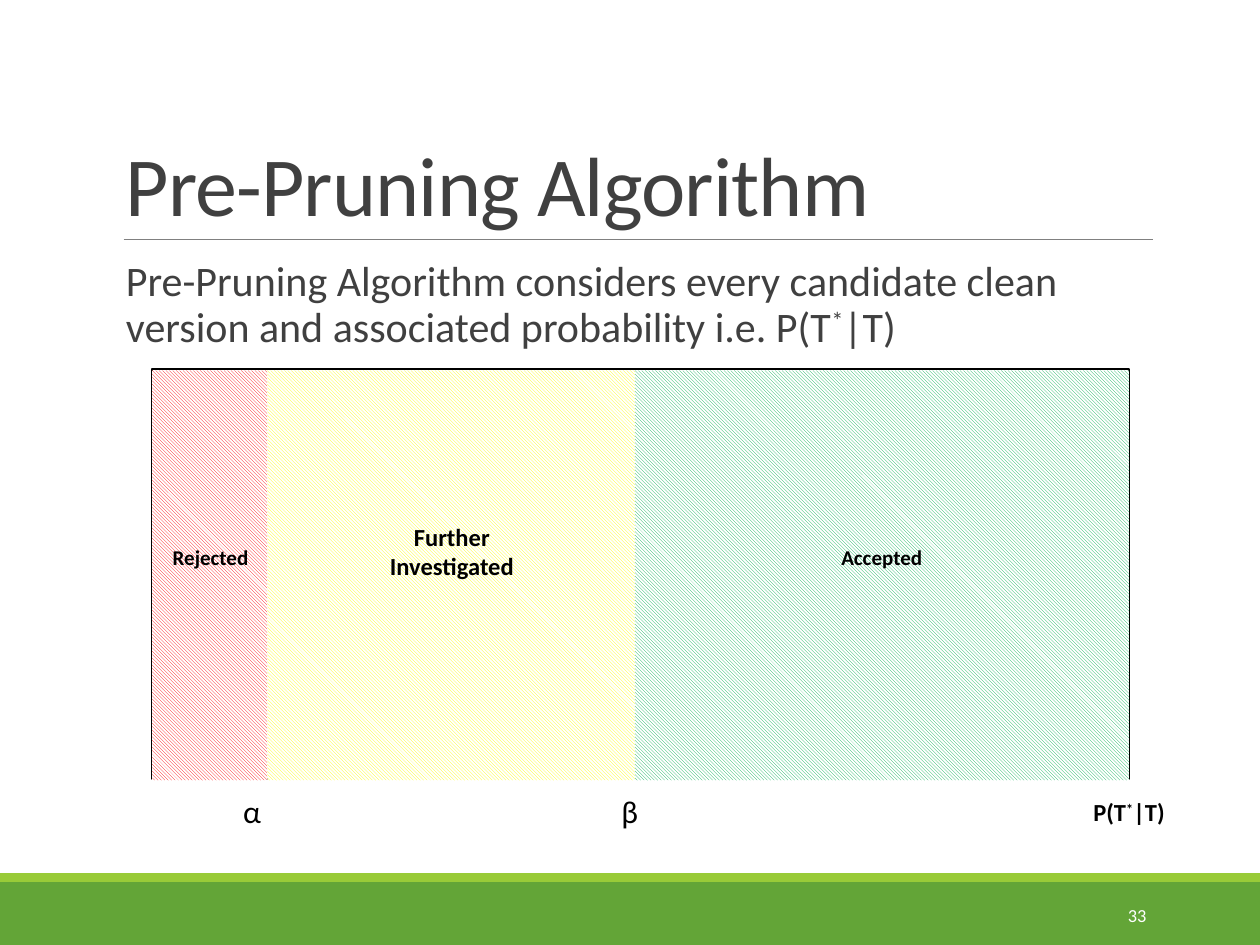
from dataclasses import dataclass

from pptx import Presentation
from pptx.dml.color import RGBColor
from pptx.enum.dml import MSO_PATTERN
from pptx.enum.shapes import MSO_CONNECTOR, MSO_SHAPE
from pptx.enum.text import MSO_ANCHOR as Anchor, PP_ALIGN as Align
from pptx.oxml.ns import qn
from pptx.util import Cm, Pt

FONT = "Calibri"
BLACK = RGBColor(0x00, 0x00, 0x00)
WHITE = RGBColor(0xFF, 0xFF, 0xFF)
DARK = RGBColor(0x40, 0x40, 0x40)
GRAY = RGBColor(0x80, 0x80, 0x80)
GREEN = RGBColor(0x63, 0xA5, 0x37)
LIME = RGBColor(0x99, 0xCB, 0x38)
RED = RGBColor(0xFF, 0x00, 0x00)
YELLOW = RGBColor(0xFF, 0xFF, 0x00)
MINT = RGBColor(0x00, 0xB0, 0x50)

WIDTH, HEIGHT = 25.4, 19.05
LEFT, TOP, TALL = 3.07, 7.47, 8.26


@dataclass
class Box:
    left: float
    top: float
    width: float
    height: float

    def cm(self) -> tuple:
        return Cm(self.left), Cm(self.top), Cm(self.width), Cm(self.height)


@dataclass
class Label:
    text: str
    box: Box
    size: float
    bold: bool = False
    color: RGBColor = BLACK
    align: Align = Align.CENTER
    anchor: Anchor = Anchor.TOP


@dataclass
class Zone:
    width: float
    color: RGBColor


def add_rect(slide, box: Box):
    rect = slide.shapes.add_shape(MSO_SHAPE.RECTANGLE, *box.cm())
    rect.shadow.inherit = False
    rect.line.fill.background()
    return rect


def add_bar(slide, box: Box, color: RGBColor) -> None:
    fill = add_rect(slide, box).fill
    fill.solid()
    fill.fore_color.rgb = color


def add_zone(slide, box: Box, color: RGBColor) -> None:
    fill = add_rect(slide, box).fill
    fill.patterned()
    fill.pattern = MSO_PATTERN.DARK_DOWNWARD_DIAGONAL
    fill.fore_color.rgb = color
    fill.back_color.rgb = WHITE


def add_label(slide, item: Label):
    """Add a text box; any asterisk in the text is raised."""
    frame = slide.shapes.add_textbox(*item.box.cm()).text_frame
    frame.word_wrap = True
    frame.vertical_anchor = item.anchor
    para = frame.paragraphs[0]
    para.alignment = item.align
    for part in item.text.partition("*"):
        if part:
            run = para.add_run()
            run.text = part
            run.font.name = FONT
            run.font.size = Pt(item.size)
            run.font.bold = item.bold
            run.font.color.rgb = item.color
            if part == "*":
                run.font._element.set("baseline", "30000")
    return frame


def add_rule(slide, left: float, right: float, top: float) -> None:
    rule = slide.shapes.add_connector(
        MSO_CONNECTOR.STRAIGHT, Cm(left), Cm(top), Cm(right), Cm(top))
    rule.line.color.rgb = GRAY
    rule.line.width = Pt(0.5)
    props = rule._element.spPr
    props.append(props.makeelement(qn("a:effectLst"), {}))


ZONES = [Zone(2.32, RED), Zone(7.41, YELLOW), Zone(9.96, MINT)]

LABELS = [
    Label("α", Box(4.65, 15.85, 1.47, 1.02), 18, align=Align.LEFT),
    Label("β", Box(11.96, 15.85, 1.47, 1.02), 18),
    Label("P(T*|T)", Box(21.44, 15.95, 2.64, 0.86), 14, True),
    Label("Rejected", Box(2.24, 10.85, 4.01, 0.76), 12, True),
    Label("Accepted", Box(15.77, 10.85, 4.01, 0.76), 12, True),
    Label("Further Investigated", Box(6.99, 10.39, 4.24, 1.45), 14, True),
]

TITLE = Label("Pre-Pruning Algorithm", Box(2.29, 0.79, 20.96, 4.04), 48,
              color=DARK, align=Align.LEFT, anchor=Anchor.BOTTOM)
BODY = Label("Pre-Pruning Algorithm considers every candidate clean version "
             "and associated probability i.e. P(T*|T)",
             Box(2.29, 5.13, 20.96, 11.18), 24, color=DARK, align=Align.LEFT)
NUMBER = Label("33", Box(20.62, 17.93, 2.74, 1.02), 10.5, color=WHITE,
               align=Align.RIGHT, anchor=Anchor.MIDDLE)


def main() -> None:
    deck = Presentation()
    deck.slide_width, deck.slide_height = Cm(WIDTH), Cm(HEIGHT)
    slide = deck.slides.add_slide(deck.slide_layouts[6])

    # Footer bars and rule under the title
    add_bar(slide, Box(0, 17.78, WIDTH, 1.27), GREEN)
    add_bar(slide, Box(0, 17.6, WIDTH, 0.18), LIME)
    add_rule(slide, 2.49, 23.24, 4.83)

    # Title, body and slide number
    para = add_label(slide, TITLE).paragraphs[0]
    para.line_spacing = 0.85
    para.runs[0].font._element.set("spc", "-50")
    frame = add_label(slide, BODY)
    frame.margin_left = Cm(0.25)
    frame.margin_right = 0
    para = frame.paragraphs[0]
    para.line_spacing = 0.9
    para.space_before, para.space_after = Pt(12), Pt(2)
    add_label(slide, NUMBER)

    # Frame behind the probability zones
    edge = add_rect(slide, Box(LEFT, 7.44, sum(z.width for z in ZONES), TALL))
    edge.fill.background()
    edge.line.color.rgb = BLACK
    edge.line.width = Pt(1.25)

    # Zones side by side, then their labels
    left = LEFT
    for zone in ZONES:
        add_zone(slide, Box(left, TOP, zone.width, TALL), zone.color)
        left += zone.width
    for item in LABELS:
        add_label(slide, item)

    deck.save("out.pptx")


if __name__ == "__main__":
    main()
